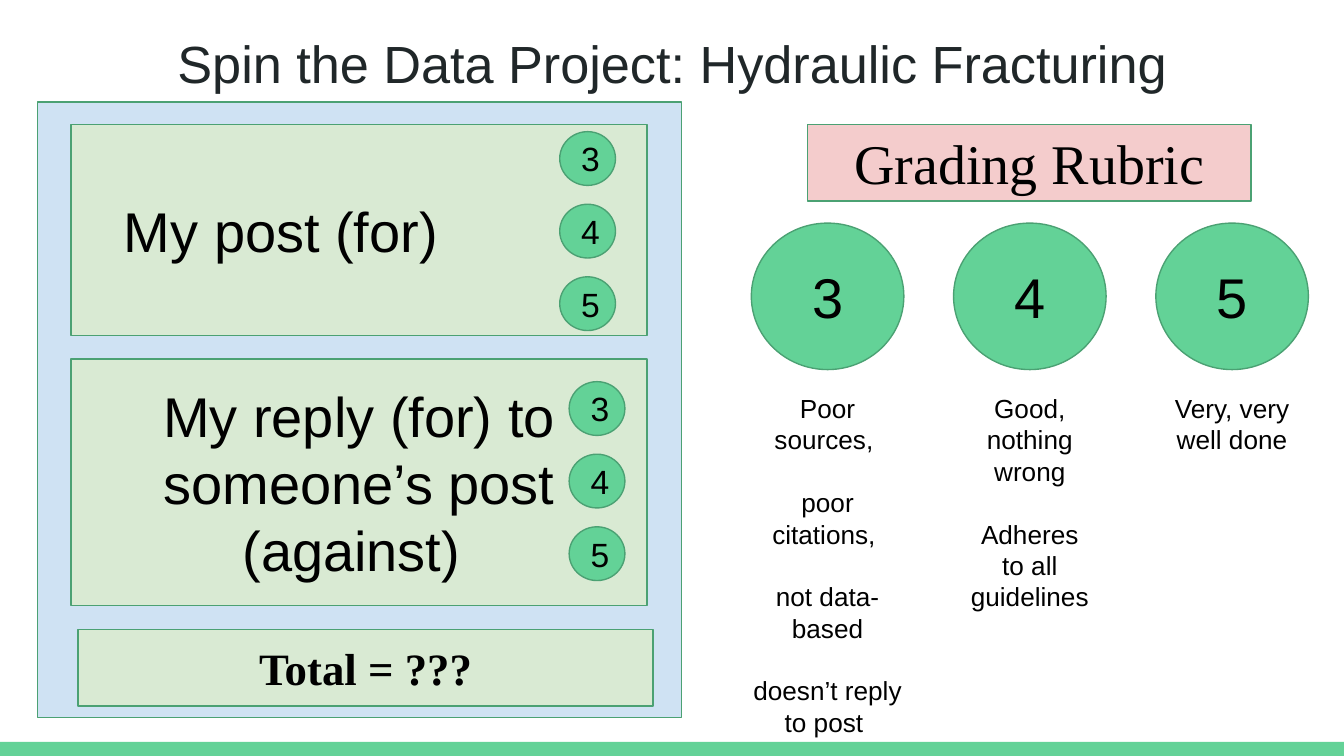
from dataclasses import dataclass
from typing import Optional

from pptx import Presentation
from pptx.dml.color import RGBColor
from pptx.enum.shapes import MSO_SHAPE
from pptx.enum.text import MSO_ANCHOR, MSO_AUTO_SIZE, PP_ALIGN
from pptx.util import Inches, Pt

# The slide is a 16:9 grid, 1000 columns wide
COLUMNS = 1000
ROWS = COLUMNS * 9 / 16
CELL = Inches(0.01)
INSET = 10


@dataclass(frozen=True)
class Theme:
    green: str = "63D297"
    outline: str = "4BA173"
    blue: str = "CFE2F3"
    pale_green: str = "D9EAD3"
    pink: str = "F4CCCC"
    title_ink: str = "202729"
    ink: str = "000000"
    sans: str = "Arial"
    serif: str = "Times New Roman"
    title_size: int = 28
    large: int = 30
    total_size: int = 24
    score_size: int = 18
    note_size: int = 14
    note_gap: float = 16.8


THEME = Theme()


@dataclass(frozen=True)
class Box:
    column: float
    row: float
    width: float
    height: float


@dataclass(frozen=True)
class Style:
    size: int
    font: str = THEME.sans
    color: str = THEME.ink
    bold: bool = False
    gap: float = 0  # points between paragraphs


@dataclass(frozen=True)
class Card:
    box: Box
    fill: str
    lines: tuple[str, ...] = ()
    style: Style = Style(THEME.large)
    right_inset: int = INSET


@dataclass(frozen=True)
class Grade:
    score: str
    notes: tuple[str, ...]
    note_width: int
    note_height: int


def place(shape, box: Box) -> None:
    shape.left, shape.top = int(box.column * CELL), int(box.row * CELL)
    shape.width, shape.height = int(box.width * CELL), int(box.height * CELL)


def write(shape, lines: tuple[str, ...], style: Style,
          anchor=MSO_ANCHOR.MIDDLE, right_inset: int = INSET) -> None:
    frame = shape.text_frame
    frame.word_wrap = True
    frame.auto_size = MSO_AUTO_SIZE.NONE
    frame.vertical_anchor = anchor
    frame.margin_left = frame.margin_top = frame.margin_bottom = INSET * CELL
    frame.margin_right = right_inset * CELL
    for index, line in enumerate(lines):
        paragraph = frame.add_paragraph() if index else frame.paragraphs[0]
        paragraph.alignment = PP_ALIGN.CENTER
        paragraph.line_spacing = 1.0
        paragraph.space_before = Pt(style.gap if index else 0)
        run = paragraph.add_run()
        run.text = line
        run.font.name = style.font
        run.font.size = Pt(style.size)
        run.font.bold = style.bold
        run.font.color.rgb = RGBColor.from_string(style.color)


def add_shape(slide, kind: MSO_SHAPE, box: Box, fill: str,
              outline: Optional[str] = THEME.outline):
    shape = slide.shapes.add_shape(kind, 0, 0, 0, 0)
    place(shape, box)
    shape.shadow.inherit = False
    shape.fill.solid()
    shape.fill.fore_color.rgb = RGBColor.from_string(fill)
    if outline:
        shape.line.color.rgb = RGBColor.from_string(outline)
        shape.line.width = Pt(0.75)
    else:
        shape.line.fill.background()
    return shape


def add_card(slide, card: Card) -> None:
    shape = add_shape(slide, MSO_SHAPE.RECTANGLE, card.box, card.fill)
    if card.lines:
        write(shape, card.lines, card.style, right_inset=card.right_inset)


def add_circle(slide, box: Box, score: str, size: int) -> None:
    circle = add_shape(slide, MSO_SHAPE.OVAL, box, THEME.green)
    write(circle, (score,), Style(size))


def add_grade(slide, grade: Grade, column: float) -> None:
    circle = Box(column, 166, 113.5, 109)
    add_circle(slide, circle, grade.score, THEME.large)
    note_column = column + (circle.width - grade.note_width) / 2
    notes = slide.shapes.add_textbox(0, 0, 0, 0)
    place(notes, Box(note_column, 282, grade.note_width, grade.note_height))
    write(notes, grade.notes, Style(THEME.note_size, gap=THEME.note_gap),
          MSO_ANCHOR.TOP)


CARDS = (
    Card(Box(28, 76, 479, 458), THEME.blue),
    Card(Box(53, 92.5, 428.5, 157), THEME.pale_green, ("My post (for)",),
         right_inset=126),
    Card(Box(53, 267, 428.5, 183.5), THEME.pale_green,
         ("My reply (for) to someone’s post", "(against) ")),
    Card(Box(58, 468.5, 428, 57), THEME.pale_green, ("Total = ???",),
         Style(THEME.total_size, THEME.serif, bold=True)),
    Card(Box(601, 92.5, 330, 57), THEME.pink, ("Grading Rubric",),
         Style(THEME.large, THEME.serif)),
)

GRADES = (
    Grade("3", ("Poor sources, ", "poor citations, ", "not data-based",
                "doesn’t reply to post "), 135, 267),
    Grade("4", ("Good, nothing wrong", "Adheres to all guidelines"), 113, 243),
    Grade("5", ("Very, very well done",), 113, 87),
)

# Column and first row of each stack of small score circles
SCORE_STACKS = ((416.5, 98), (423.5, 284))


def main() -> None:
    presentation = Presentation()
    presentation.slide_width = int(COLUMNS * CELL)
    presentation.slide_height = int(ROWS * CELL)
    slide = presentation.slides.add_slide(presentation.slide_layouts[5])

    # Title and footer bar
    title = slide.shapes.title
    place(title, Box(34, 13, 932, 63))
    write(title, ("Spin the Data Project: Hydraulic Fracturing",),
          Style(THEME.title_size, color=THEME.title_ink), MSO_ANCHOR.TOP)
    add_shape(slide, MSO_SHAPE.RECTANGLE, Box(0, 552, COLUMNS, ROWS - 552),
              THEME.green, None)

    # Panel, assignment cards and rubric heading
    for card in CARDS:
        add_card(slide, card)

    # Rubric columns, and the same scores beside each assignment
    for index, grade in enumerate(GRADES):
        add_grade(slide, grade, 559 + index * 150.5)
        for column, row in SCORE_STACKS:
            add_circle(slide, Box(column, row + index * 54, 41.5, 40),
                       grade.score, THEME.score_size)

    presentation.save("out.pptx")


if __name__ == "__main__":
    main()
